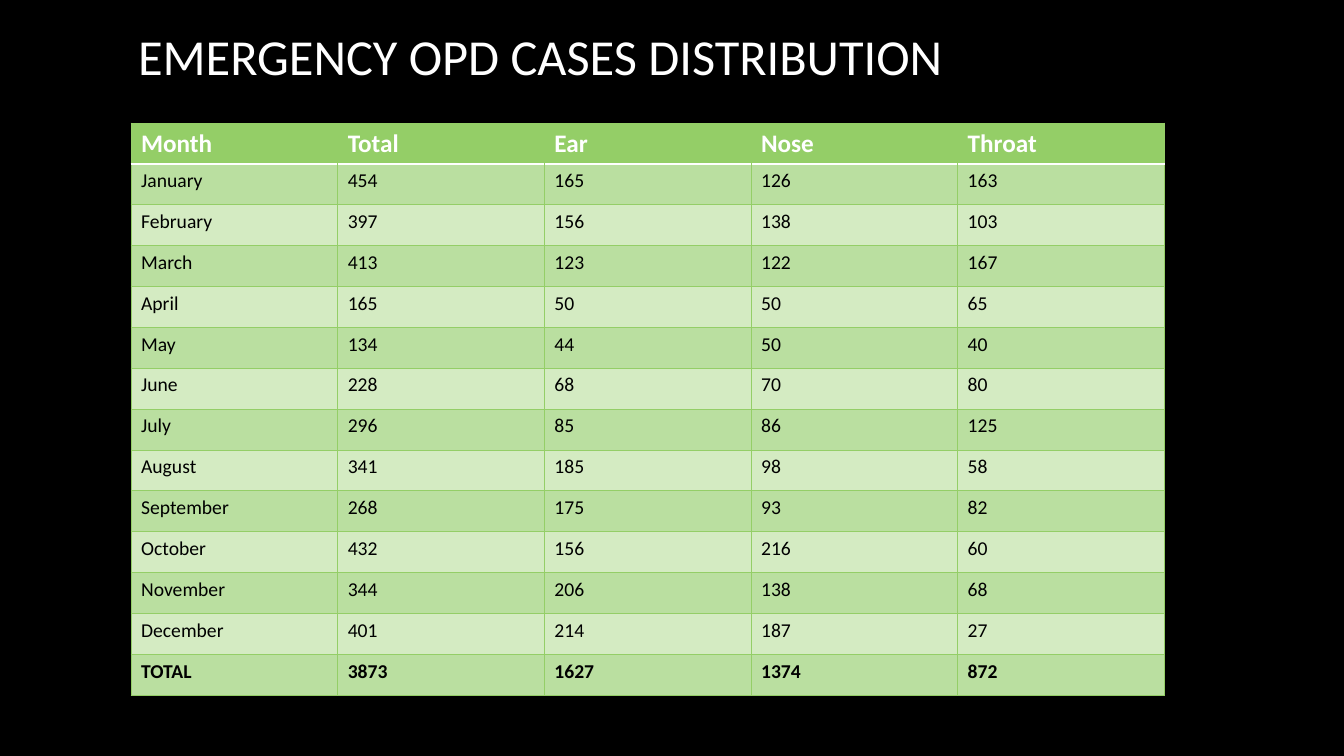
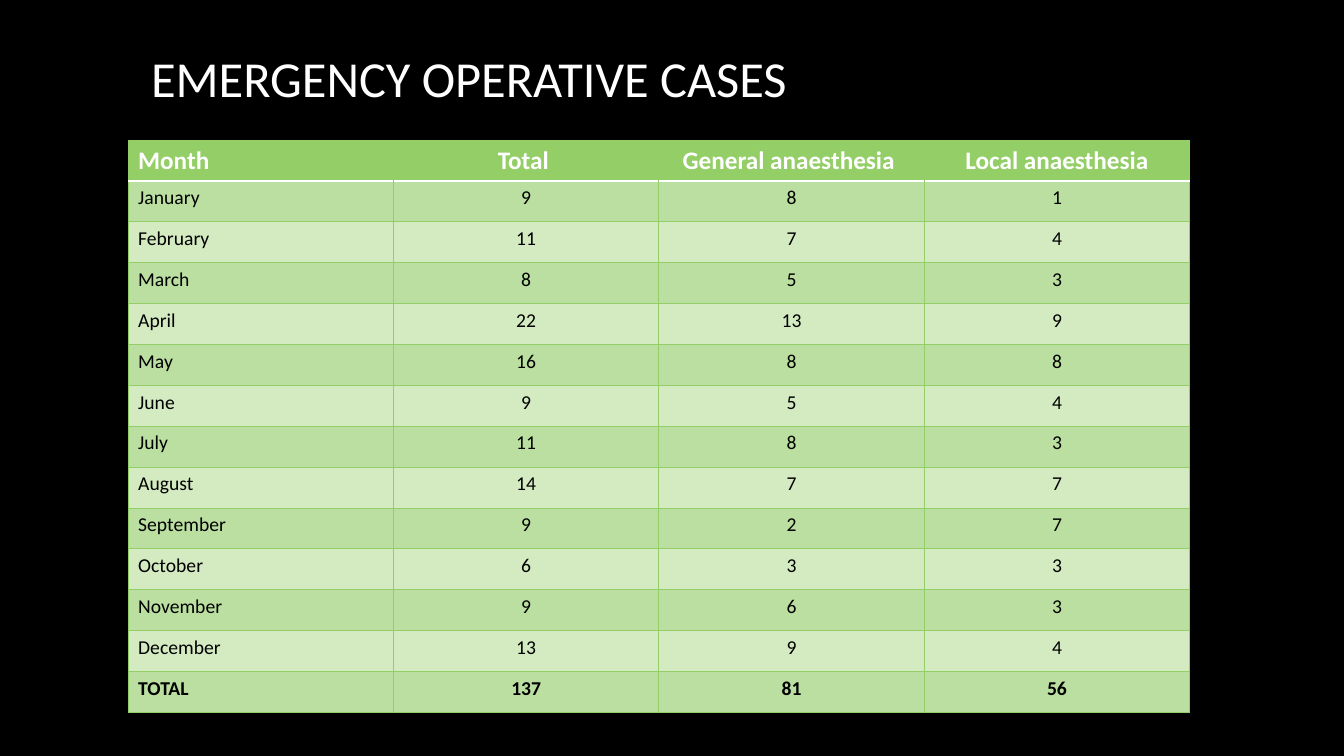
import pptx
import pptx.dml.color
import pptx.enum.text
import pptx.oxml.ns
import pptx.util
import lxml.etree

BLACK = pptx.dml.color.RGBColor(0x00, 0x00, 0x00)
WHITE = pptx.dml.color.RGBColor(0xFF, 0xFF, 0xFF)
GREEN = pptx.dml.color.RGBColor(0x94, 0xCE, 0x67)
MID_GREEN = pptx.dml.color.RGBColor(0xBA, 0xDF, 0xA0)
PALE_GREEN = pptx.dml.color.RGBColor(0xD4, 0xEB, 0xC2)

LEFT = pptx.enum.text.PP_ALIGN.LEFT
CENTER = pptx.enum.text.PP_ALIGN.CENTER

TITLE = {"name": "Calibri", "size": pptx.util.Pt(36), "bold": False}
HEADING = {"name": "Calibri", "size": pptx.util.Pt(18), "bold": True}
BODY = {"name": "Calibri", "size": pptx.util.Pt(14), "bold": False}
TOTAL = {**BODY, "bold": True}

MONTHS = ["January", "February", "March", "April", "May", "June", "July",
          "August", "September", "October", "November", "December", "TOTAL"]


class CaseDeck:
    """Builds black slides with a title and a green table, placed in percent of the slide."""

    def __init__(self):
        self.deck = pptx.Presentation()
        self.deck.slide_width = pptx.util.Inches(13.33)
        self.deck.slide_height = pptx.util.Inches(7.5)
        self.slide = None

    def place(self, left, top, width, height):
        across, down = self.deck.slide_width / 100, self.deck.slide_height / 100
        return [round(length) for length in
                (left * across, top * down, width * across, height * down)]

    def add_slide(self):
        self.slide = self.deck.slides.add_slide(self.deck.slide_layouts[6])
        background = self.slide.background.fill
        background.solid()
        background.fore_color.rgb = BLACK

    def label(self, frame, text, style, color, align=LEFT):
        paragraph = frame.paragraphs[0]
        paragraph.alignment = align
        run = paragraph.add_run()
        run.text = text
        for attribute, value in style.items():
            setattr(run.font, attribute, value)
        run.font.color.rgb = color

    def title(self, text, *area):
        frame = self.slide.shapes.add_textbox(*self.place(*area)).text_frame
        frame.word_wrap = True
        frame.vertical_anchor = pptx.enum.text.MSO_ANCHOR.MIDDLE
        self.label(frame, text, TITLE, WHITE)

    def borders(self, cell, edges):
        properties = cell._tc.get_or_add_tcPr()
        for position, (side, (color, points)) in enumerate(edges.items()):
            line = lxml.etree.Element(pptx.oxml.ns.qn(f"a:ln{side}"),
                                      w=str(pptx.util.Pt(points)))
            if color is None:
                lxml.etree.SubElement(line, pptx.oxml.ns.qn("a:noFill"))
            else:
                solid = lxml.etree.SubElement(line, pptx.oxml.ns.qn("a:solidFill"))
                lxml.etree.SubElement(solid, pptx.oxml.ns.qn("a:srgbClr"), val=str(color))
            properties.insert(position, line)

    def table(self, headings, columns, align, *area):
        rows = [headings, *zip(MONTHS, *columns)]
        left, top, width, height = self.place(*area)
        table = self.slide.shapes.add_table(
            len(rows), len(headings), left, top, width, height).table
        for column in table.columns:
            column.width = round(width / len(headings))
        for row in table.rows:
            row.height = round(height / len(rows))
        thin, rule, none = (GREEN, 0.75), (WHITE, 1.5), (None, 0)
        last_column = len(headings) - 1
        for r, values in enumerate(rows):
            if r == 0:
                style, color, fill = HEADING, WHITE, GREEN
            else:
                style = TOTAL if r == len(rows) - 1 else BODY
                color, fill = BLACK, MID_GREEN if r % 2 else PALE_GREEN
            for c, value in enumerate(values):
                cell = table.cell(r, c)
                cell.fill.solid()
                cell.fill.fore_color.rgb = fill
                self.label(cell.text_frame, str(value), style, color, align if c else LEFT)
                self.borders(cell, {
                    "L": thin if r or c == 0 else none,
                    "R": thin if r or c == last_column else none,
                    "T": rule if r == 1 else thin,
                    "B": thin if r else rule,
                })


def main():
    cases = CaseDeck()

    cases.add_slide()
    cases.title("EMERGENCY OPD CASES DISTRIBUTION", 9.53, 2.13, 78.1, 10.27)
    cases.table(
        ["Month", "Total", "Ear", "Nose", "Throat"],
        [[454, 397, 413, 165, 134, 228, 296, 341, 268, 432, 344, 401, 3873],
         [165, 156, 123, 50, 44, 68, 85, 185, 175, 156, 206, 214, 1627],
         [126, 138, 122, 50, 50, 70, 86, 98, 93, 216, 138, 187, 1374],
         [163, 103, 167, 65, 40, 80, 125, 58, 82, 60, 68, 27, 872]],
        LEFT, 9.75, 16.27, 76.89, 75.73)

    cases.add_slide()
    cases.title("EMERGENCY OPERATIVE CASES", 10.5, 1.6, 78.24, 17.33)
    cases.table(
        ["Month", "Total ", "General anaesthesia ", "Local anaesthesia"],
        [[9, 11, 8, 22, 16, 9, 11, 14, 9, 6, 9, 13, 137],
         [8, 7, 5, 13, 8, 5, 8, 7, 2, 3, 6, 9, 81],
         [1, 4, 3, 9, 8, 4, 3, 7, 7, 3, 3, 4, 56]],
        CENTER, 9.53, 18.53, 79, 75.73)

    cases.deck.save("out.pptx")


if __name__ == "__main__":
    main()
